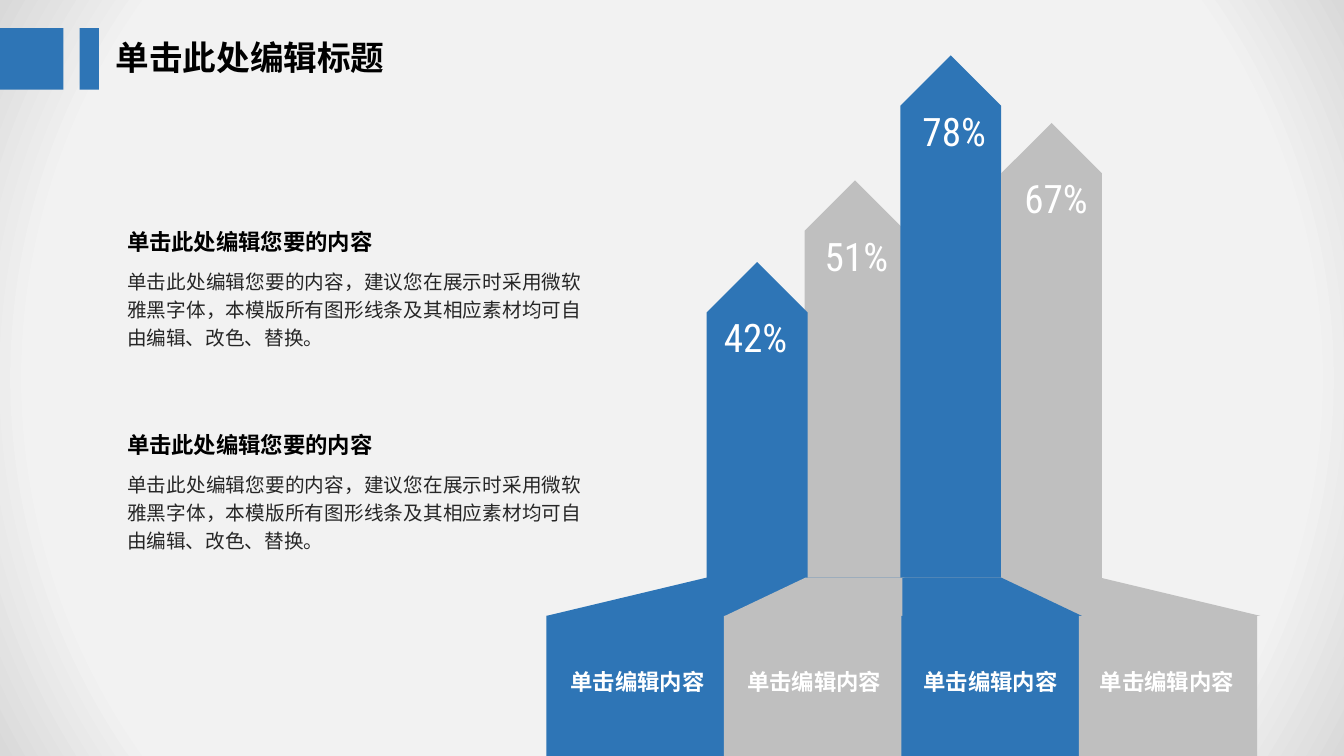
from lxml.etree import SubElement
from pptx import Presentation
from pptx.dml.color import RGBColor
from pptx.enum.shapes import MSO_SHAPE
from pptx.enum.text import MSO_ANCHOR, MSO_AUTO_SIZE, PP_ALIGN
from pptx.oxml.ns import qn
from pptx.util import Pt

PX = 9144  # EMU in one px, 100 px to the inch
SLIDE_WIDTH, SLIDE_HEIGHT = 1333, 750

BLUE = RGBColor(0x2E, 0x75, 0xB6)
GREY = RGBColor(0xBF, 0xBF, 0xBF)
WHITE = RGBColor(0xFF, 0xFF, 0xFF)
BLACK = RGBColor(0x00, 0x00, 0x00)
DARK = RGBColor(0x26, 0x26, 0x26)
PALE = RGBColor(0xF2, 0xF2, 0xF2)
SHADE = RGBColor(0xD9, 0xD9, 0xD9)

CJK_FONT = "Noto Sans CJK SC"
NUMBER_FONT = "Roboto Condensed"

TITLE = "单击此处编辑标题"
HEADING = "单击此处编辑您要的内容"
BODY = ("单击此处编辑您要的内容，建议您在展示时采用微软雅黑字体，"
        "本模版所有图形线条及其相应素材均可自由编辑、改色、替换。")
BASE_LABEL = "单击编辑内容"

# value, colour, pillar left, pillar top, value left
COLUMNS = [
    ("42%", BLUE, 701, 260, 698),
    ("51%", GREY, 798, 179, 798),
    ("78%", BLUE, 893, 55, 895),
    ("67%", GREY, 993, 122, 996),
]
PILLAR_ORDER = (1, 2, 3, 0)  # back to front
SKIRT_ORDER = (0, 1, 3, 2)
# side of the axis, half width at the top, half width at the bottom
SKIRTS = [(-1, 195, 354), (-1, 97, 177), (1, 97, 177), (1, 195, 354)]


def emu(*lengths):
    return [round(length * PX) for length in lengths]


def paint(shape, colour):
    shape.fill.solid()
    shape.fill.fore_color.rgb = colour
    shape.line.fill.background()
    shape.shadow.inherit = False


def add_block(shapes, kind, box, colour):
    block = shapes.add_shape(kind, *emu(*box))
    paint(block, colour)
    return block


def add_text(shapes, box, text, size=16, colour=BLACK, font=CJK_FONT, bold=False,
             align=PP_ALIGN.JUSTIFY, anchor=MSO_ANCHOR.TOP, insets=(0, 0, 0, 0),
             line_spacing=1.2, space_before=0.2, grow=True):
    """Insets are left, top, right, bottom; space_before is a share of the size."""
    frame = shapes.add_textbox(*emu(*box)).text_frame
    frame.word_wrap = True
    frame.auto_size = MSO_AUTO_SIZE.SHAPE_TO_FIT_TEXT if grow else MSO_AUTO_SIZE.NONE
    frame.vertical_anchor = anchor
    (frame.margin_left, frame.margin_top,
     frame.margin_right, frame.margin_bottom) = emu(*insets)
    paragraph = frame.paragraphs[0]
    paragraph.alignment = align
    paragraph.line_spacing = line_spacing
    paragraph.space_before = Pt(size * space_before)
    run = paragraph.add_run()
    run.text = text
    run.font.size = Pt(size)
    run.font.bold = bold
    run.font.name = font
    run.font.color.rgb = colour
    SubElement(run.font._element, qn("a:ea"), typeface=font)


def set_background(slide):
    fill = slide.background.fill
    fill.gradient()
    for stop, position, colour in zip(fill.gradient_stops, (0.83, 1), (PALE, SHADE)):
        stop.position = position
        stop.color.rgb = colour
    gradient = slide.element.find(".//" + qn("a:gradFill"))
    gradient.remove(gradient.find(qn("a:lin")))
    circle = SubElement(gradient, qn("a:path"), path="circle")
    SubElement(circle, qn("a:fillToRect"), l="50000", t="50000", r="50000", b="50000")


def add_title(slide, left, top):
    shapes = slide.shapes.add_group_shape().shapes
    for offset, width in ((0, 63), (79, 19)):
        add_block(shapes, MSO_SHAPE.RECTANGLE, (left + offset, top, width, 61), BLUE)
    add_text(shapes, (left + 105, top + 8, 297, 43), TITLE, size=24, bold=True,
             align=PP_ALIGN.LEFT, insets=(10, 5, 10, 5), line_spacing=0.9,
             space_before=0, grow=False)


def add_passage(slide, left, top, width):
    add_text(slide.shapes, (left, top, width, 30), HEADING, bold=True)
    add_text(slide.shapes, (left, top + 42, width, 82), BODY, size=14, colour=DARK)


def add_pillar(slide, left, top, width, height, colour):
    """The pentagon points right, so it is laid out lying down and turned upright."""
    shift = (height - width) / 2
    pillar = add_block(slide.shapes, MSO_SHAPE.PENTAGON,
                       (left - shift, top + shift, height, width), colour)
    pillar.rotation = 270


def add_skirt(slide, axis, top, bottom, skirt, colour):
    side, top_half, bottom_half = skirt
    inner = axis - side
    points = [(axis + side * top_half, top), (axis + side * bottom_half, bottom),
              (inner, bottom), (inner, top)]
    builder = slide.shapes.build_freeform(*points[0], scale=PX)
    builder.add_line_segments(points[1:], close=True)
    paint(builder.convert_to_shape(), colour)


def add_column_graphic(slide, left, base_top):
    for index in PILLAR_ORDER:
        _, colour, pillar_left, top, _ = COLUMNS[index]
        add_pillar(slide, pillar_left, top, 100, base_top - top, colour)
    for index in SKIRT_ORDER:
        add_skirt(slide, left + 354, base_top - 38, base_top,
                  SKIRTS[index], COLUMNS[index][1])
    for index, (value, colour, _, top, value_left) in enumerate(COLUMNS):
        add_block(slide.shapes, MSO_SHAPE.RECTANGLE,
                  (left + 176 * index, base_top, 177, SLIDE_HEIGHT - base_top), colour)
        add_text(slide.shapes, (value_left, top + 46, 133, 57), value, size=28,
                 colour=WHITE, font=NUMBER_FONT, align=PP_ALIGN.CENTER,
                 anchor=MSO_ANCHOR.MIDDLE, insets=(10, 5, 40, 5),
                 line_spacing=1, space_before=0)
    for index in range(len(COLUMNS)):
        add_text(slide.shapes, (left + 24 + 175 * index, base_top + 46, 209, 65),
                 BASE_LABEL, colour=WHITE, bold=True)


def main():
    presentation = Presentation()
    presentation.slide_width, presentation.slide_height = emu(SLIDE_WIDTH, SLIDE_HEIGHT)
    slide = presentation.slides.add_slide(presentation.slide_layouts[6])
    set_background(slide)
    add_column_graphic(slide, 542, 611)
    for top in (221, 422):
        add_passage(slide, 126, top, 451)
    add_title(slide, 0, 28)
    presentation.save("out.pptx")


if __name__ == "__main__":
    main()
